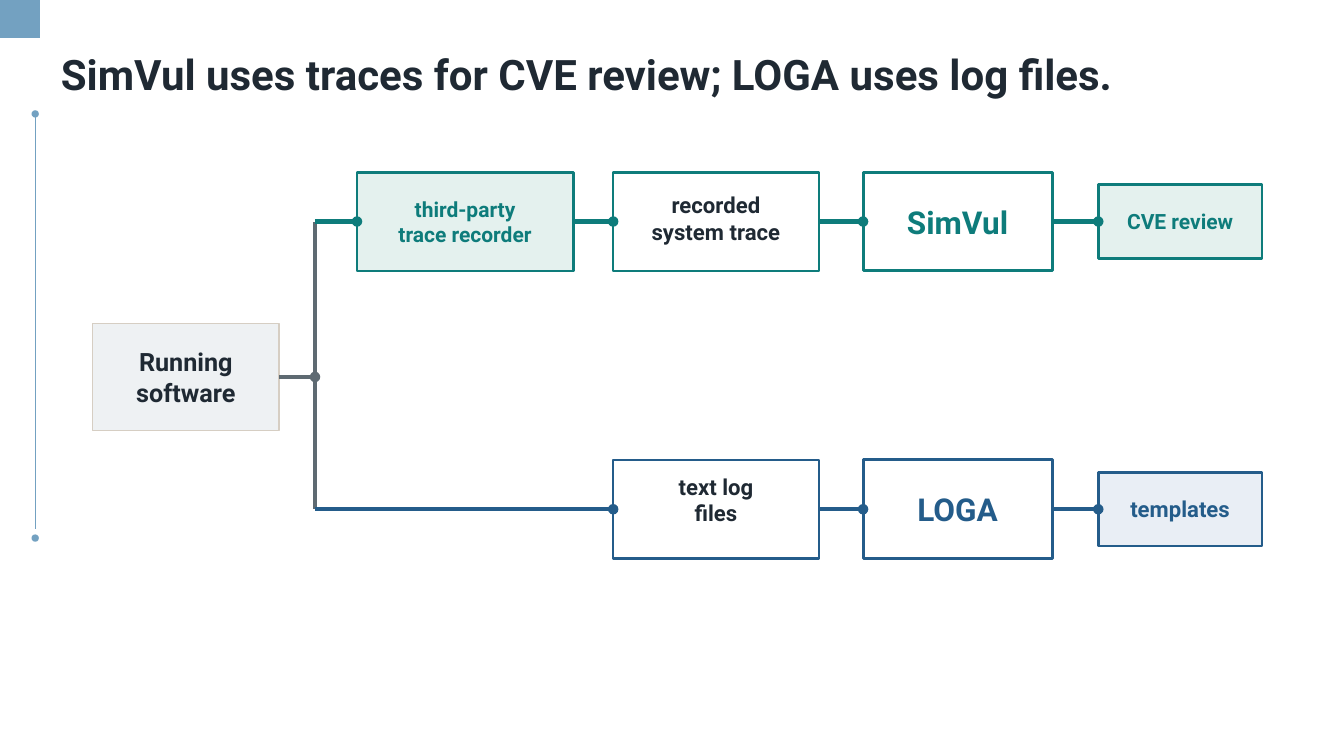
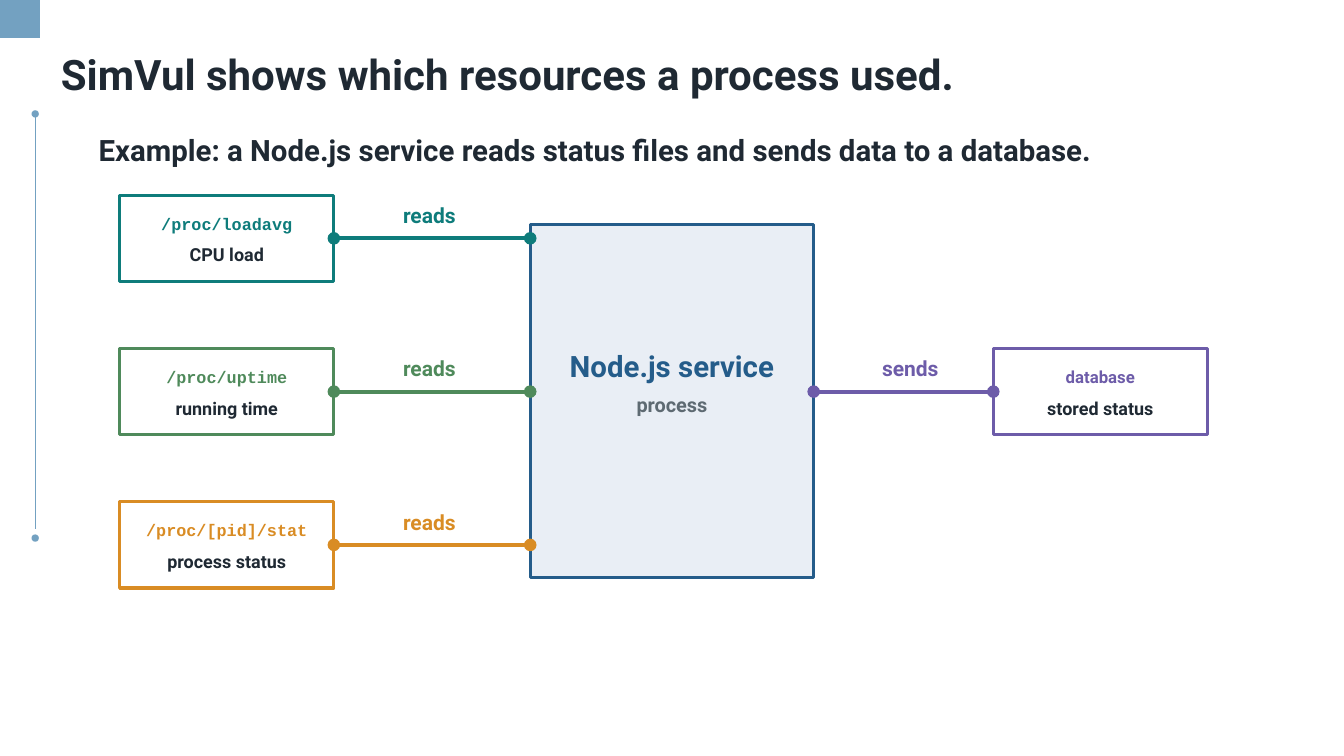
from itertools import pairwise
from typing import NamedTuple

from lxml.etree import SubElement
from pptx import Presentation
from pptx.dml.color import RGBColor
from pptx.enum.shapes import MSO_CONNECTOR as Connector, MSO_SHAPE as Preset
from pptx.enum.text import MSO_ANCHOR as Anchor, MSO_AUTO_SIZE as AutoSize, PP_ALIGN as Align
from pptx.oxml.ns import qn
from pptx.util import Emu, Pt

INK = RGBColor(0x1F, 0x29, 0x33)
SLATE = RGBColor(0x5E, 0x6A, 0x72)
SKY = RGBColor(0x73, 0xA1, 0xC1)
TEAL = RGBColor(0x0E, 0x7C, 0x7B)
BLUE = RGBColor(0x24, 0x5C, 0x8A)
GREEN = RGBColor(0x4F, 0x8A, 0x5B)
ORANGE = RGBColor(0xD9, 0x8C, 0x24)
PURPLE = RGBColor(0x6D, 0x5C, 0xA9)
SAND = RGBColor(0xD6, 0xCE, 0xC3)
WHITE = RGBColor(0xFF, 0xFF, 0xFF)
MIST = RGBColor(0xEE, 0xF1, 0xF3)
PALE_TEAL = RGBColor(0xE4, 0xF1, 0xEE)
PALE_BLUE = RGBColor(0xE9, 0xEE, 0xF5)

SANS, MONO = "Roboto", "Courier New"


def px(length):
    return Emu(round(length * 9525))


class Line(NamedTuple):
    text: str
    size: float
    color: RGBColor
    font: str = SANS


class Deck:
    """Holds the deck, its style and the slide being drawn."""

    def __init__(self):
        self.deck = Presentation()
        self.deck.slide_width, self.deck.slide_height = px(1280), px(720)
        self.page = None

    def new_page(self, title):
        self.page = self.deck.slides.add_slide(self.deck.slide_layouts[5])
        self.rail()
        heading = self.page.shapes.title
        heading.left, heading.top, heading.width, heading.height = map(px, (58, 46, 1120, 66))
        self.set_lines(heading.text_frame, [Line(title, 30, INK)], Align.LEFT, Anchor.TOP)

    def rail(self):
        """Corner block and the thin dotted-end line on the left edge."""
        self.shape(Preset.RECTANGLE, 0, 0, 38, 36, SKY)
        self.link((33.5, 111), (33.5, 504), SKY, 0.75)
        for y in (108.5, 512.5):
            self.dot(33.5, y, 7, SKY)

    def set_lines(self, frame, lines, align=Align.CENTER, anchor=Anchor.MIDDLE, gap=0):
        frame.word_wrap = True
        frame.auto_size = AutoSize.NONE
        frame.vertical_anchor = anchor
        frame.margin_left = frame.margin_right = frame.margin_top = frame.margin_bottom = 0
        for index, line in enumerate(lines):
            para = frame.add_paragraph() if index else frame.paragraphs[0]
            para.alignment = align
            if index and gap:
                para.space_before = Pt(gap)
            span = para.add_run()
            span.text = line.text
            span.font.name, span.font.size = line.font, Pt(line.size)
            span.font.bold = True
            span.font.color.rgb = line.color

    def shape(self, preset, x, y, width, height, fill):
        shape = self.page.shapes.add_shape(preset, px(x), px(y), px(width), px(height))
        shape.shadow.inherit = False
        shape.fill.solid()
        shape.fill.fore_color.rgb = fill
        shape.line.fill.background()
        return shape

    def box(self, x, middle, width, height, lines, fill, edge, weight=2.25, lift=0, gap=0):
        """Outlined box centred on a height; lift moves its text up from the middle."""
        box = self.shape(Preset.RECTANGLE, x, middle - height / 2, width, height, fill)
        box.line.color.rgb = edge
        box.line.width = Pt(weight)
        self.set_lines(box.text_frame, lines, gap=gap)
        box.text_frame.margin_bottom = px(max(2 * lift, 0))
        box.text_frame.margin_top = px(max(-2 * lift, 0))

    def text(self, x, y, width, height, line, align=Align.CENTER):
        box = self.page.shapes.add_textbox(px(x), px(y), px(width), px(height))
        self.set_lines(box.text_frame, [line], align, Anchor.TOP)

    def link(self, start, end, color, weight=3):
        link = self.page.shapes.add_connector(Connector.STRAIGHT, *map(px, start + end))
        link.line.color.rgb = color
        link.line.width = Pt(weight)
        SubElement(link._element.spPr, qn("a:effectLst"))

    def dot(self, x, y, size, color):
        self.shape(Preset.OVAL, x - size / 2, y - size / 2, size, size, color)


def draw_paths(deck):
    deck.new_page("SimVul uses traces for CVE review; LOGA uses log files.")
    middle, fork = 359, 300
    deck.box(88, middle, 178, 102, [Line("Running", 18, INK), Line("software", 18, INK)],
             MIST, SAND, 1.13)
    deck.link((266, middle), (fork, middle), SLATE)
    deck.dot(fork, middle, 10, SLATE)

    recorder, record, tool, result = (340, 206, 94), (584, 196, 94), (822, 180, 94), (1046, 156, 70)
    # Each step: place, lines of text, size, text colour, fill, border, text lift
    rows = [
        (211, TEAL, [
            (recorder, ["third-party", "trace recorder"], 15, TEAL, PALE_TEAL, 1.88, 0),
            (record, ["recorded", "system trace"], 15.8, INK, WHITE, 1.88, 3),
            (tool, ["SimVul"], 22.5, TEAL, WHITE, 2.25, 0),
            (result, ["CVE review"], 15, TEAL, PALE_TEAL, 1.88, 0),
        ]),
        (485, BLUE, [
            (record, ["text log", "files"], 15.8, INK, WHITE, 1.88, 9),
            (tool, ["LOGA"], 22.5, BLUE, WHITE, 2.25, 0),
            (result, ["templates"], 15.8, BLUE, PALE_BLUE, 1.88, 1),
        ]),
    ]
    deck.link((fork, rows[0][0]), (fork, rows[1][0]), SLATE)
    for y, color, steps in rows:
        for (x, width, height), words, size, ink, fill, weight, lift in steps:
            lines = [Line(word, size, ink) for word in words]
            deck.box(x, y, width, height, lines, fill, color, weight, lift)
        places = [(fork, 0, 0)] + [step[0] for step in steps]
        for (left, width, _), (right, _, _) in pairwise(places):
            deck.link((left + width, y), (right, y), color)
            deck.dot(right, y, 10, color)


def draw_resources(deck):
    deck.new_page("SimVul shows which resources a process used.")
    deck.text(94, 126, 960, 34, Line(
        "Example: a Node.js service reads status files and sends data to a database.", 21, INK),
        Align.LEFT)
    left, right, width = 505, 775, 204
    deck.box(left, 382, right - left, 336,
             [Line("Node.js service", 21, BLUE), Line("process", 14.2, SLATE)],
             PALE_BLUE, BLUE, lift=18, gap=7)

    files, first, step = 114, 227, 146
    reads = (files + width, left, "reads", 354)
    sends = (right, 946, "sends", 812)
    resources = [
        (files, 0, "/proc/loadavg", MONO, "CPU load", TEAL, reads),
        (files, 1, "/proc/uptime", MONO, "running time", GREEN, reads),
        (files, 2, "/proc/[pid]/stat", MONO, "process status", ORANGE, reads),
        (946, 1, "database", SANS, "stored status", PURPLE, sends),
    ]
    for x, row, name, font, meaning, color, (start, end, verb, label_x) in resources:
        y = first + row * step
        deck.box(x, y, width, 82, [Line(name, 12, color, font), Line(meaning, 12.8, INK)],
                 WHITE, color, lift=-1, gap=7.5)
        deck.link((start, y), (end, y), color)
        for dot_x in (start, end):
            deck.dot(dot_x, y, 12, color)
        deck.text(label_x, y - 34, 110, 26, Line(verb, 15, color))


def main():
    deck = Deck()
    draw_paths(deck)
    draw_resources(deck)
    deck.deck.save("out.pptx")


if __name__ == "__main__":
    main()
